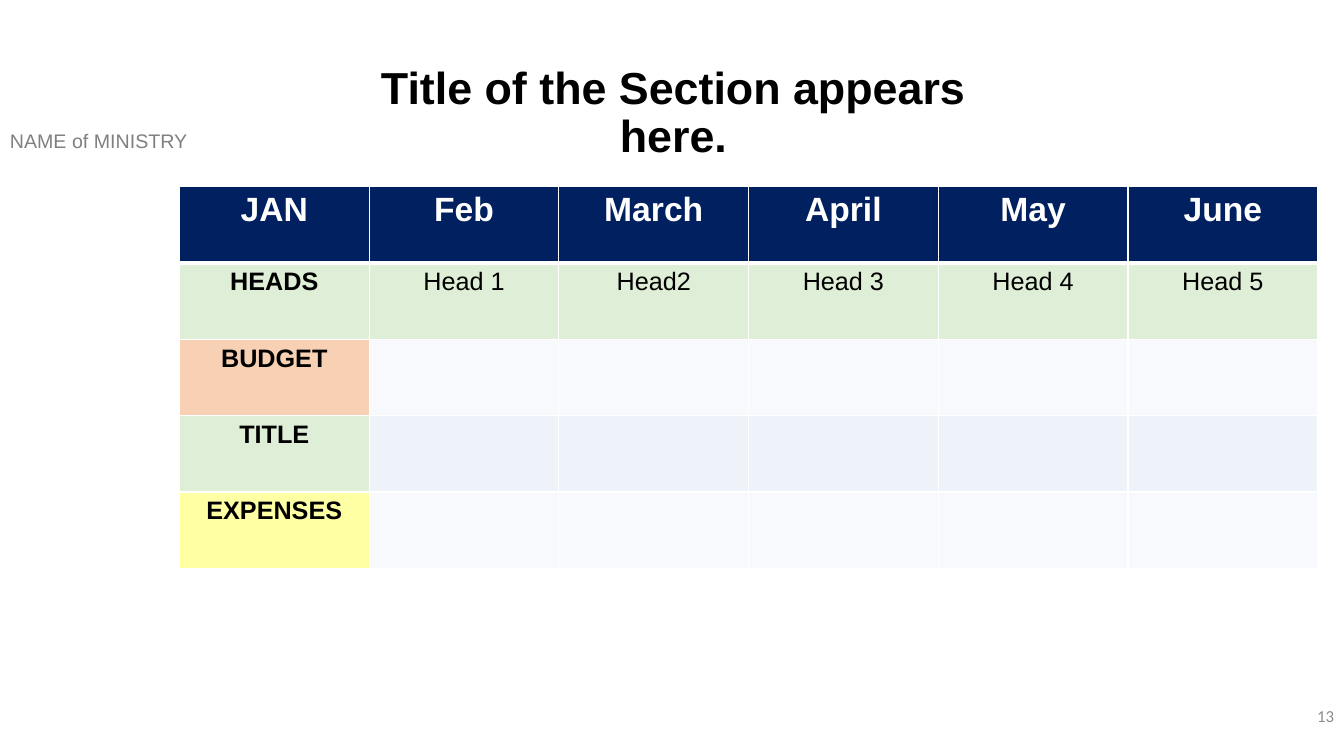
from lxml.etree import SubElement
from pptx import Presentation
from pptx.dml.color import RGBColor
from pptx.enum.text import MSO_ANCHOR, MSO_AUTO_SIZE, PP_ALIGN
from pptx.oxml import parse_xml
from pptx.oxml.ns import nsdecls, qn
from pptx.util import Inches, Pt

COLORS = {
    "navy": "002060", "green": "A9D18E", "orange": "ED7D31", "yellow": "FFFF00",
    "pale": "EAEFF7", "blue": "D2DEEF", "white": "FFFFFF", "black": "000000",
    "gray": "808080", "number": "8C8C8C",
}
MONTHS = ["JAN", "Feb", "March", "April", "May", "June"]
HEADS = ["HEADS", "Head 1", "Head2", "Head 3", "Head 4", "Head 5"]
# Texts, colour of the first cell, colour of the other cells
ROWS = [
    (MONTHS, "navy", "navy"),
    (HEADS, "green", "green"),
    (["BUDGET"], "orange", "pale"),
    (["TITLE"], "green", "blue"),
    (["EXPENSES"], "yellow", "pale"),
]


def write(tf, text, size=18, color="black", bold=False, font="Arial",
          align=PP_ALIGN.CENTER, spacing=None):
    p = tf.paragraphs[0]
    p.alignment = align
    p.line_spacing = spacing
    r = p.add_run()
    r.text = text
    r.font.name = font
    r.font.size = Pt(size)
    r.font.bold = bold
    r.font.color.rgb = RGBColor.from_string(COLORS[color])


def fill_cell(cell, color, alpha=None):
    cell.fill.solid()
    cell.fill.fore_color.rgb = RGBColor.from_string(COLORS[color])
    if alpha:
        clr = cell._tc.tcPr.find(".//" + qn("a:srgbClr"))
        SubElement(clr, qn("a:alpha"), val=str(alpha * 1000))


def border_cell(cell, **widths):
    # Borders come before the fill, in the order left, right, top, bottom
    for i, side in enumerate("LRTB"):
        width = Pt(widths.get(side, 1))
        cell._tc.tcPr.insert(i, parse_xml(
            f'<a:ln{side} {nsdecls("a")} w="{width}"><a:solidFill>'
            f'<a:srgbClr val="{COLORS["white"]}"/></a:solidFill></a:ln{side}>'))


def add_title(s, x, y, w, h):
    sp = s.shapes.title
    sp.left, sp.top, sp.width, sp.height = map(Inches, (x, y, w, h))
    tf = sp.text_frame
    tf.word_wrap = True
    tf.auto_size = MSO_AUTO_SIZE.SHAPE_TO_FIT_TEXT
    tf.vertical_anchor = MSO_ANCHOR.TOP
    write(tf, "Title of the Section appears here.", size=32, bold=True, spacing=0.9)


def add_label(s, x, y, w, h, text, anchor=MSO_ANCHOR.TOP, **fmt):
    tf = s.shapes.add_textbox(*map(Inches, (x, y, w, h))).text_frame
    tf.word_wrap = True
    tf.vertical_anchor = anchor
    write(tf, text, **fmt)


def add_budget_table(s, x, y, w, h):
    table = s.shapes.add_table(len(ROWS), len(MONTHS),
                               *map(Inches, (x, y, w, h))).table
    for col in table.columns:
        col.width = Inches(w / len(MONTHS))
    for i, (texts, first, rest) in enumerate(ROWS):
        header = i == 0
        table.rows[i].height = Inches(h / len(ROWS))
        for j, cell in enumerate(table.rows[i].cells):
            fill_cell(cell, rest if j else first, None if header else 36)
            border_cell(cell, T=3 if i == 1 else 1, B=3 if header else 1)
            if j < len(texts):
                write(cell.text_frame, texts[j], size=24 if header else 18,
                      color="white" if header else "black", bold=header or j == 0)


def main():
    prs = Presentation()
    prs.slide_width, prs.slide_height = Inches(13.33), Inches(7.5)
    s = prs.slides.add_slide(prs.slide_layouts[5])

    # Ministry name, table, page number and title
    add_label(s, 0, 1.23, 2.9, 0.34, "NAME of MINISTRY", size=14, color="gray",
              align=PP_ALIGN.LEFT)
    add_budget_table(s, 1.78, 1.85, 11.29, 3.79)
    add_label(s, 10.33, 6.9, 3, 0.4, "13", anchor=MSO_ANCHOR.MIDDLE, size=12,
              color="number", font="Calibri", align=PP_ALIGN.RIGHT)
    add_title(s, 3.28, 0.6, 6.8, 0.59)

    prs.save("out.pptx")


if __name__ == "__main__":
    main()
